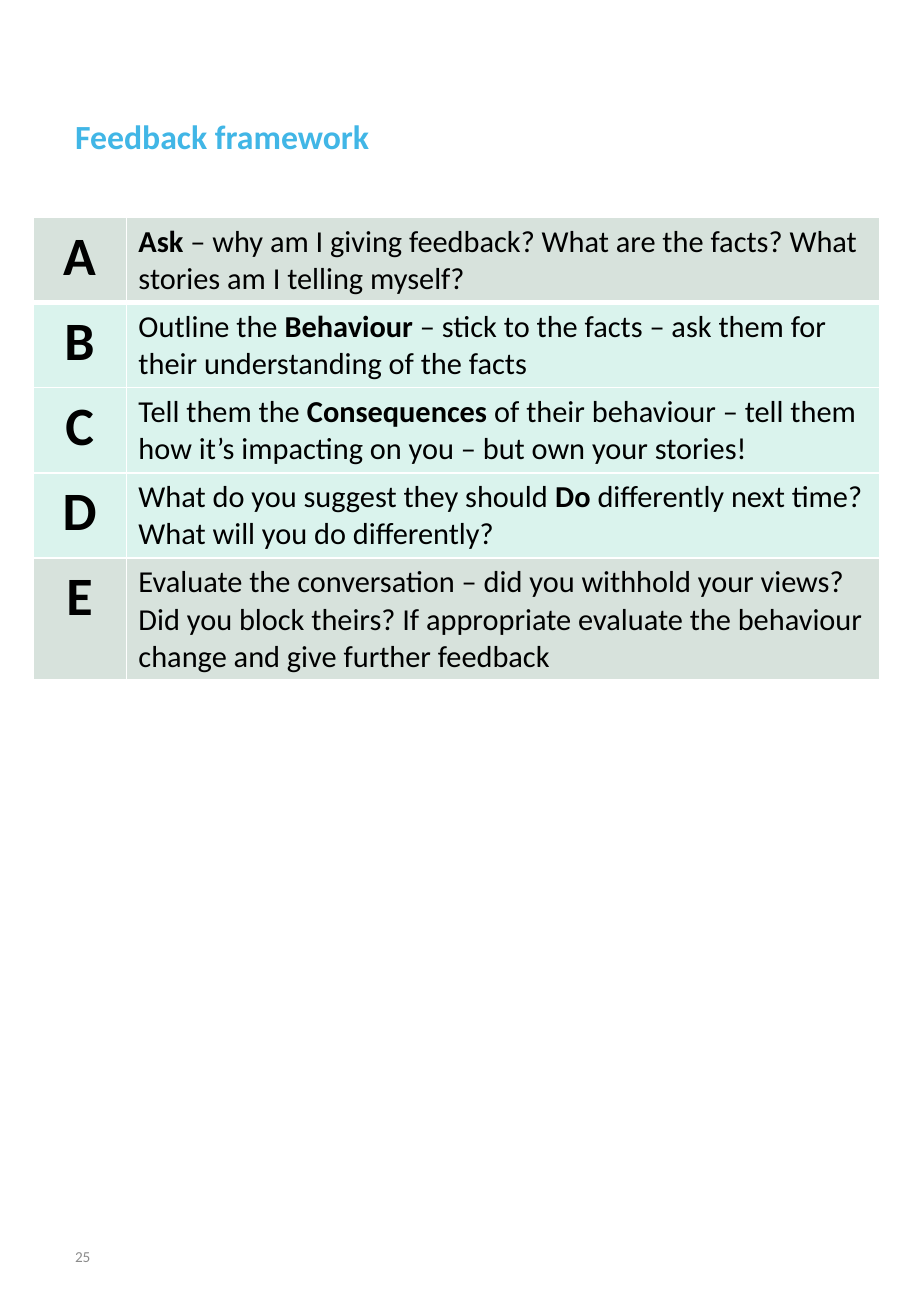
from dataclasses import dataclass

from lxml import etree
from pptx import Presentation
from pptx.dml.color import RGBColor
from pptx.enum.text import MSO_ANCHOR, PP_ALIGN
from pptx.oxml.ns import qn
from pptx.util import Inches, Pt

MIDDLE = MSO_ANCHOR.MIDDLE
LEFT, CENTER = PP_ALIGN.LEFT, PP_ALIGN.CENTER
FONT = "Calibri"
SLIDE_W, SLIDE_H = Inches(7.5), Inches(10.83)
BLACK, WHITE, BLUE, GRAY = "000000", "FFFFFF", "41B6E6", "8C8C8C"
SAGE, MINT = "D7E2DC", "DAF3ED"
TABLE_LEFT, TABLE_TOP, TABLE_H = 3.6, 16.53, 35.09
COLUMN_WIDTHS = (10.27, 82.67)
THIN, THICK = 1, 3


@dataclass
class Label:
    text: str
    top: float
    width: float
    size: int
    color: str
    bold: bool = False
    spacing: float = 1.0


@dataclass
class Step:
    letter: str
    before: str
    key: str
    after: str
    fill: str
    height: float = 6.19


LABELS = [
    Label("Feedback framework", 7.85, 86.27, 20, BLUE, True, 0.9),
    Label("25", 92.8, 22.53, 9, GRAY),
]
STEPS = [
    Step("A", "", "Ask", " – why am I giving feedback? What are the facts? "
         "What stories am I telling myself?", SAGE),
    Step("B", "Outline the ", "Behaviour ", "– stick to the facts – ask them for "
         "their understanding of the facts", MINT),
    Step("C", "Tell them the ", "Consequences", " of their behaviour – tell them "
         "how it’s impacting on you – but own your stories!", MINT),
    Step("D", "What do you suggest they should ", "Do ", "differently next time? "
         "What will you do differently?", MINT),
    Step("E", "Evaluate the conversation – did you withhold your views? Did you "
         "block theirs? If appropriate evaluate the behaviour change and give "
         "further feedback", "", "", SAGE, 8.86),
]


def across(percent: float) -> int:
    return round(SLIDE_W * percent / 100)


def down(percent: float) -> int:
    return round(SLIDE_H * percent / 100)


def rgb(color: str) -> RGBColor:
    return RGBColor.from_string(color)


def style(p, size: int, color: str, align=LEFT) -> None:
    p.alignment = align
    p.font.name = FONT
    p.font.size = Pt(size)
    p.font.color.rgb = rgb(color)


def add_label(s, label: Label) -> None:
    sp = s.shapes.add_textbox(across(6.93), down(label.top),
                              across(label.width), down(5.36))
    tf = sp.text_frame
    tf.word_wrap = True
    tf.vertical_anchor = MIDDLE
    p = tf.paragraphs[0]
    p.text = label.text
    p.line_spacing = label.spacing
    style(p, label.size, label.color)
    p.font.bold = label.bold


def set_borders(cell, top: int, bottom: int) -> None:
    tc_pr = cell._tc.get_or_add_tcPr()
    widths = {"a:lnL": THIN, "a:lnR": THIN, "a:lnT": top, "a:lnB": bottom}
    for tag, width in widths.items():
        ln = etree.SubElement(tc_pr, qn(tag), w=str(Pt(width)))
        fill = etree.SubElement(ln, qn("a:solidFill"))
        etree.SubElement(fill, qn("a:srgbClr"), val=WHITE)


def fill_cell(cell, parts: list[tuple[str, bool]], size: int, align) -> None:
    p = cell.text_frame.paragraphs[0]
    style(p, size, BLACK, align)
    for text, bold in parts:
        if text:
            r = p.add_run()
            r.text = text
            r.font.bold = bold


def add_steps(s, steps: list[Step]) -> None:
    frame = s.shapes.add_table(len(steps), len(COLUMN_WIDTHS),
                               across(TABLE_LEFT), down(TABLE_TOP),
                               across(sum(COLUMN_WIDTHS)), down(TABLE_H))
    table = frame.table
    table.first_row = table.horz_banding = False
    for column, width in zip(table.columns, COLUMN_WIDTHS):
        column.width = across(width)
    for i, step in enumerate(steps):
        row = table.rows[i]
        row.height = down(step.height)
        letter, advice = row.cells
        for cell in (letter, advice):
            set_borders(cell, THICK if i == 1 else THIN, THICK if i == 0 else THIN)
            cell.fill.solid()
            cell.fill.fore_color.rgb = rgb(step.fill)
        fill_cell(letter, [(step.letter, True)], 32, CENTER)
        fill_cell(advice, [(step.before, False), (step.key, True),
                           (step.after, False)], 18, LEFT)
    frame.height = down(TABLE_H)


def main() -> None:
    """Build the feedback framework slide."""
    prs = Presentation()
    prs.slide_width, prs.slide_height = SLIDE_W, SLIDE_H
    s = prs.slides.add_slide(prs.slide_layouts[6])
    for label in LABELS:
        add_label(s, label)
    add_steps(s, STEPS)
    prs.save("out.pptx")


if __name__ == "__main__":
    main()
